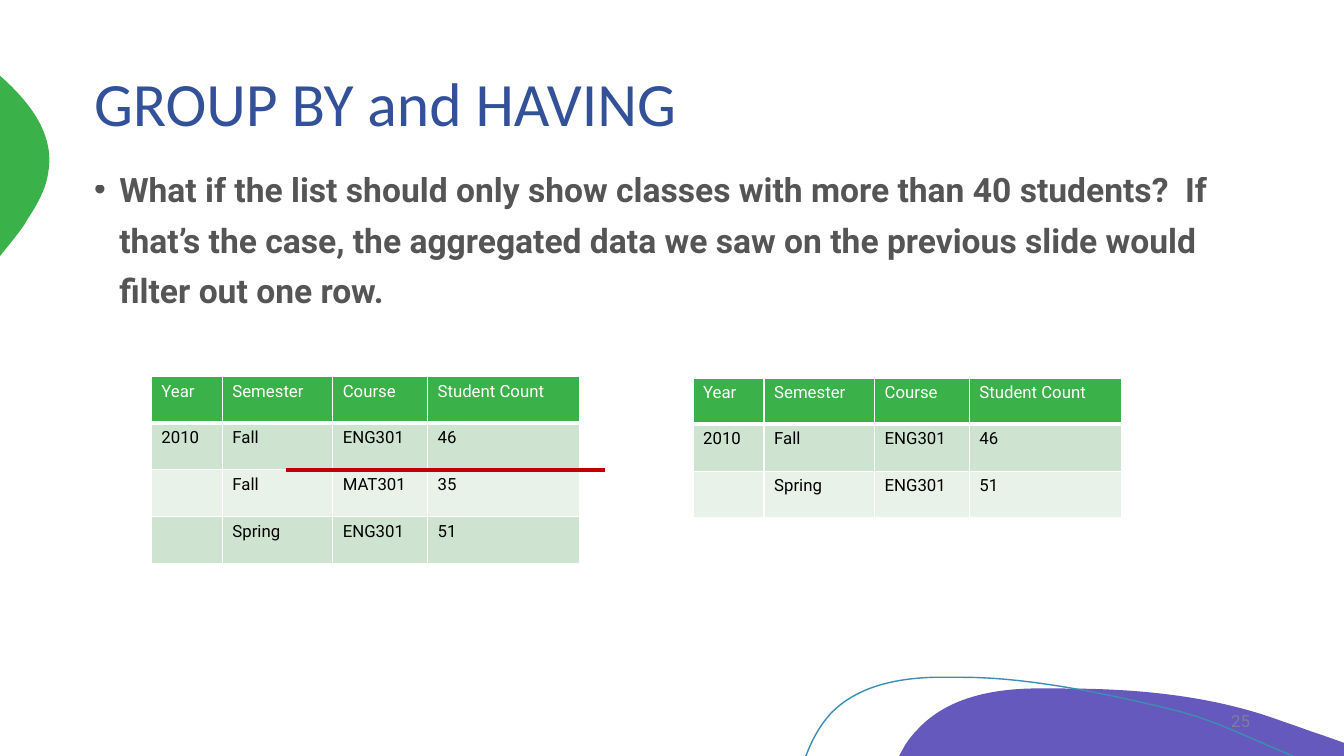
from lxml.etree import SubElement
from pptx import Presentation
from pptx.dml.color import RGBColor
from pptx.enum.shapes import MSO_CONNECTOR
from pptx.enum.text import MSO_ANCHOR, MSO_AUTO_SIZE, PP_ALIGN
from pptx.oxml.ns import qn
from pptx.util import Pt

TITLE = "GROUP BY and HAVING"
QUESTION = ("What if the list should only show classes with more than 40 students?  If that’s "
            "the case, the aggregated data we saw on the previous slide would filter out one row.")
PAGE_NUMBER = "25"

HEADER = ("Year", "Semester", "Course", "Student Count")
ALL_CLASSES = [
    ("2010", "Fall", "ENG301", "46"),
    ("", "Fall", "MAT301", "35"),
    ("", "Spring", "ENG301", "51"),
]
LARGE_CLASSES = [ALL_CLASSES[0], ALL_CLASSES[2]]
TABLES = [(108.1, 269.2, ALL_CLASSES), (495.1, 270.1, LARGE_CLASSES)]
COLUMN_WIDTHS = (50.7, 78.9, 67.7, 108.6)
HEADER_HEIGHT, ROW_HEIGHT = 32.9, 33.55

GREEN, PURPLE, TEAL, WHITE = "3BB149", "6659BD", "3B8EB1", "FFFFFF"
BAND_COLOURS = ("CEE4D0", "E8F2E9")
HEADER_BORDERS = {"L": 1, "R": 1, "T": 1, "B": 3}
STRIKE = dict(left=204.1, right=432, y=335.9, colour="C00000", width=3)

# Two numbers are a straight step; six are two control points and an end point.
PURPLE_WAVE = [
    (758.9, 491.8), (812.2, 491.8, 866.9, 496.8, 916.6, 515.5),
    (925.9, 518.4, 934.6, 522, 943.9, 524.9), (960, 530.6), (960, 540), (642.2, 540),
    (646.6, 532.1), (649.4, 527.8, 652.3, 524.2, 655.9, 520.6),
    (676.1, 499, 707, 492.5, 736.6, 491.8), (743.8, 491.8, 751, 491.8, 758.9, 491.8),
]
GREEN_LEAF = [
    (0, 54), (0.7, 54.7), (21.6, 73.4, 38.9, 95.8, 34.6, 122.4),
    (33.1, 134.6, 26.6, 146.2, 19.4, 157), (17.3, 161.3, 12.2, 167.8, 5.8, 175.7), (0, 182.9),
]
TEAL_CURVE = [
    (575.3, 540), (576, 539.3), (580.3, 527.8, 586.1, 517.7, 593.3, 509.8),
    (612, 490.3, 640.1, 484.6, 666.7, 483.8), (687.6, 483.8),
    (735.8, 483.8, 792, 496.1, 831.6, 505.4), (870.5, 514.8, 882.7, 523.4, 923.8, 540),
]
# Steps, width of the curved outline, fill, line
ORNAMENTS = [
    (PURPLE_WAVE, 317.8, PURPLE, None),
    (GREEN_LEAF, 35.3, GREEN, None),
    (TEAL_CURVE, 348.5, None, TEAL),
]


def colour(hex_string):
    return RGBColor.from_string(hex_string)


def set_attributes(target, **values):
    for name, value in values.items():
        setattr(target, name, value)


def place(shape, left, top, width, height):
    set_attributes(shape, left=Pt(left), top=Pt(top), width=Pt(width), height=Pt(height))


def write(paragraph, text, size, font, hex_string, bold=False, opacity=None):
    run = paragraph.add_run()
    run.text = text
    set_attributes(run.font, size=Pt(size), name=font, bold=bold)
    run.font.color.rgb = colour(hex_string)
    if opacity:
        fill = run.font.color._xFill
        SubElement(fill[0], qn("a:alpha"), val=str(opacity * 1000))


def bend(shape, steps, width):
    """Turn the straight segments of curved steps into cubic ones."""
    left, top = shape.left, shape.top
    shape.width = Pt(width)
    outline = next(shape._element.iter(qn("a:path")))
    outline.set("w", str(Pt(width)))
    for segment, step in zip(list(outline)[1:], steps[1:]):
        if len(step) == 6:
            segment.tag = qn("a:cubicBezTo")
            segment.remove(segment[0])
            for x, y in zip(step[::2], step[1::2]):
                SubElement(segment, qn("a:pt"), x=str(Pt(x) - left), y=str(Pt(y) - top))


def add_ornament(slide, layer, steps, width, fill_colour, line_colour):
    ends = [(Pt(step[-2]), Pt(step[-1])) for step in steps]
    builder = slide.shapes.build_freeform(*ends[0])
    builder.add_line_segments(ends[1:], close=fill_colour is not None)
    shape = builder.convert_to_shape()
    bend(shape, steps, width)
    shape.shadow.inherit = False
    if fill_colour:
        shape.fill.solid()
        shape.fill.fore_color.rgb = colour(fill_colour)
        shape.line.fill.background()
    else:
        shape.fill.background()
        shape.line.color.rgb = colour(line_colour)
        shape.line.width = Pt(1)
    slide.shapes._spTree.insert(2 + layer, shape._element)  # behind the text


def format_cell(cell, text, fill_colour, text_colour, borders):
    properties = cell._tc.get_or_add_tcPr()
    for side, width in borders.items():
        border = SubElement(properties, qn(f"a:ln{side}"), w=str(Pt(width)))
        SubElement(SubElement(border, qn("a:solidFill")), qn("a:srgbClr"), val=WHITE)
    cell.fill.solid()
    cell.fill.fore_color.rgb = colour(fill_colour)
    if text:
        write(cell.text_frame.paragraphs[0], text, 12, "Roboto", text_colour)


def add_class_table(slide, left, top, classes):
    rows = [HEADER, *classes]
    heights = [HEADER_HEIGHT] + [ROW_HEIGHT] * len(classes)
    table = slide.shapes.add_table(len(rows), len(HEADER), Pt(left), Pt(top),
                                   Pt(sum(COLUMN_WIDTHS)), Pt(sum(heights))).table
    for column, width in zip(table.columns, COLUMN_WIDTHS):
        column.width = Pt(width)
    for number, (row, height, texts) in enumerate(zip(table.rows, heights, rows)):
        row.height = Pt(height)
        if number == 0:
            look = (GREEN, WHITE, HEADER_BORDERS)
        else:
            look = (BAND_COLOURS[(number - 1) % 2], "000000", {})
        for cell, text in zip(row.cells, texts):
            format_cell(cell, text, *look)


def main():
    presentation = Presentation()
    set_attributes(presentation, slide_width=Pt(960), slide_height=Pt(540))
    slide = presentation.slides.add_slide(presentation.slide_layouts[1])
    for layer, ornament in enumerate(ORNAMENTS):
        add_ornament(slide, layer, *ornament)

    title = slide.shapes.title
    place(title, 60, 15.8, 840, 120)
    set_attributes(title.text_frame, vertical_anchor=MSO_ANCHOR.MIDDLE, word_wrap=True,
                   auto_size=MSO_AUTO_SIZE.NONE)
    paragraph = title.text_frame.paragraphs[0]
    set_attributes(paragraph, alignment=PP_ALIGN.LEFT, line_spacing=0.9)
    write(paragraph, TITLE, 44, "Calibri", "335199")

    body = slide.placeholders[1]
    place(body, 60, 110, 840, 301)
    set_attributes(body.text_frame, vertical_anchor=MSO_ANCHOR.TOP, word_wrap=True,
                   auto_size=MSO_AUTO_SIZE.NONE)
    paragraph = body.text_frame.paragraphs[0]
    set_attributes(paragraph, line_spacing=1.25, space_before=Pt(10))
    properties = paragraph._p.get_or_add_pPr()
    properties.set("marL", str(Pt(18)))
    properties.set("indent", str(Pt(-18)))
    SubElement(properties, qn("a:buFont"), typeface="Arial")
    SubElement(properties, qn("a:buChar"), char="•")
    write(paragraph, QUESTION, 24, "Roboto", "0D0D0D", bold=True, opacity=70)

    number_box = slide.shapes.add_textbox(Pt(780), Pt(500.5), Pt(120), Pt(28.8))
    set_attributes(number_box.text_frame, vertical_anchor=MSO_ANCHOR.MIDDLE, word_wrap=True)
    paragraph = number_box.text_frame.paragraphs[0]
    paragraph.alignment = PP_ALIGN.RIGHT
    write(paragraph, PAGE_NUMBER, 12, "Roboto", "8C8C8C", opacity=70)

    for left, top, classes in TABLES:
        add_class_table(slide, left, top, classes)

    strike = slide.shapes.add_connector(MSO_CONNECTOR.STRAIGHT, Pt(STRIKE["left"]),
                                        Pt(STRIKE["y"]), Pt(STRIKE["right"]), Pt(STRIKE["y"]))
    strike.line.color.rgb = colour(STRIKE["colour"])
    strike.line.width = Pt(STRIKE["width"])
    SubElement(strike._element.spPr, qn("a:effectLst"))

    presentation.save("out.pptx")


if __name__ == "__main__":
    main()
